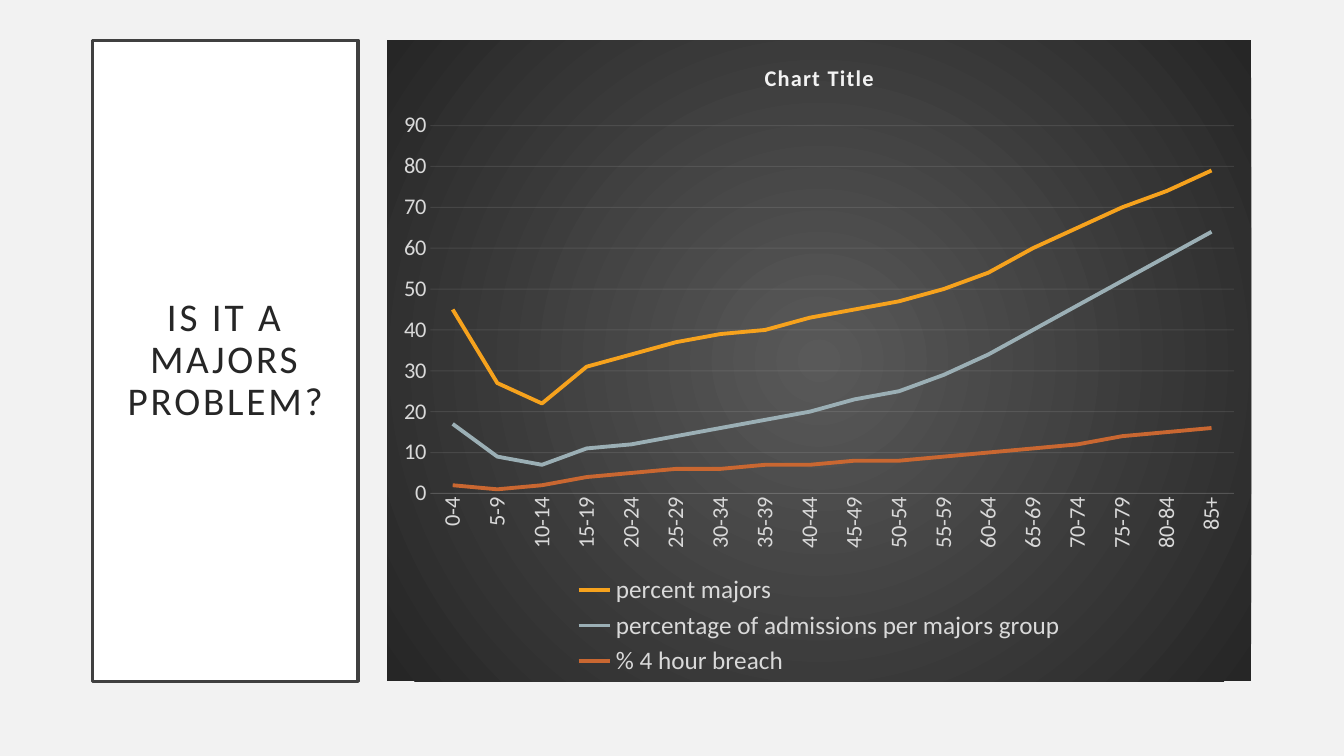
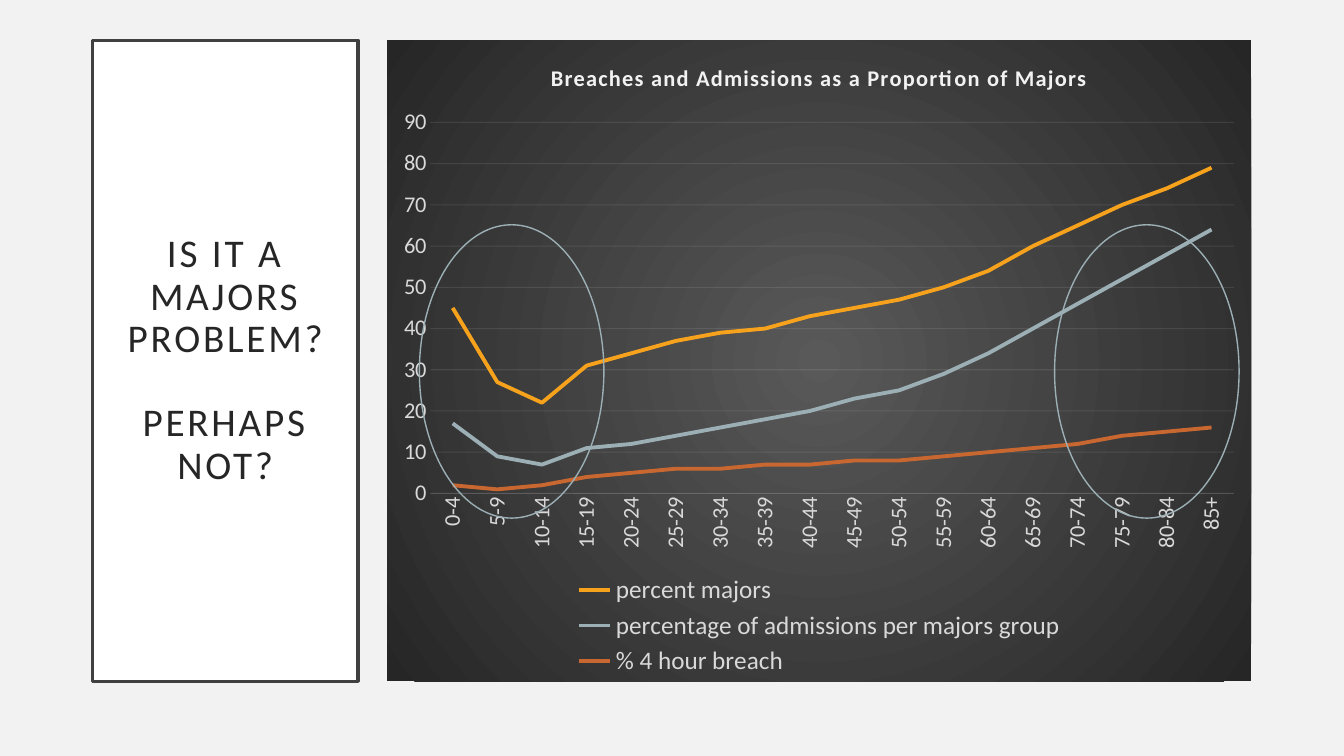
import pptx
import pptx.chart.data
import pptx.dml.color
import pptx.enum.chart
import pptx.enum.dml
import pptx.enum.shapes
import pptx.enum.text
import pptx.oxml
import pptx.oxml.ns
import pptx.util
from pptx.util import Inches

FONT = "Calibri"
COLORS = {
    "page": "F2F2F2",
    "panel": "FFFFFF",
    "border": "404040",
    "title": "262626",
    "label": "D9D9D9",
    "glow": "595959",
    "edge": "262626",
    "majors": "F6A21D",
    "admissions": "9BAFB5",
    "breach": "C96731",
}
TITLE_BOX = (0.92, 0.4, 2.63, 6.36)
CHART_BOX = (3.84, 0.4, 8.57, 6.36)
RING_BOXES = [(left, 2.23, 1.83, 2.91) for left in (4.16, 10.46)]
AGES = [f"{age}-{age + 4}" for age in range(0, 85, 5)] + ["85+"]
SERIES = [
    ("percent majors", "majors",
     [45, 27, 22, 31, 34, 37, 39, 40, 43, 45, 47, 50, 54, 60, 65, 70, 74, 79]),
    ("percentage of admissions per majors group", "admissions",
     [17, 9, 7, 11, 12, 14, 16, 18, 20, 23, 25, 29, 34, 40, 46, 52, 58, 64]),
    ("% 4 hour breach", "breach",
     [2, 1, 2, 4, 5, 6, 6, 7, 7, 8, 8, 9, 10, 11, 12, 14, 15, 16]),
]


def rgb(name):
    return pptx.dml.color.RGBColor.from_string(COLORS[name])


def place(box):
    return [Inches(length) for length in box]


def style_font(font, size, color, bold=False):
    font.name = FONT
    font.size = pptx.util.Pt(size)
    font.bold = bold
    font.color.rgb = rgb(color)


def style_line(line, color, width):
    line.color.rgb = rgb(color)
    line.width = pptx.util.Pt(width)


def set_spacing(element, query, points):
    for properties in element.xpath(query):
        properties.set("spc", str(points * 100))


def add_title_panel(page, box, lines):
    panel = page.shapes.add_shape(
        pptx.enum.shapes.MSO_SHAPE.RECTANGLE, *place(box))
    panel.shadow.inherit = False
    panel.fill.solid()
    panel.fill.fore_color.rgb = rgb("panel")
    style_line(panel.line, "border", 2.5)
    frame = panel.text_frame
    frame.word_wrap = True
    frame.vertical_anchor = pptx.enum.text.MSO_ANCHOR.MIDDLE
    frame.margin_left = frame.margin_right = Inches(0.2)
    frame.margin_top = frame.margin_bottom = Inches(0.2)
    for index, line in enumerate(lines):
        para = frame.add_paragraph() if index else frame.paragraphs[0]
        para.text = line
        para.alignment = pptx.enum.text.PP_ALIGN.CENTER
        para.line_spacing = 0.9
        para.space_before = pptx.util.Pt(30 if index else 0)
        style_font(para.font, 28, "title")
    set_spacing(panel.element, ".//a:defRPr", 2)


def add_backdrop(chart):
    backdrop = pptx.oxml.parse_xml(
        f'<c:spPr {pptx.oxml.ns.nsdecls("c", "a")}><a:gradFill><a:gsLst>'
        f'<a:gs pos="0"><a:srgbClr val="{COLORS["glow"]}"/></a:gs>'
        f'<a:gs pos="100000"><a:srgbClr val="{COLORS["edge"]}"/></a:gs>'
        '</a:gsLst><a:path path="circle">'
        '<a:fillToRect l="50000" t="50000" r="50000" b="50000"/></a:path>'
        '</a:gradFill><a:ln><a:noFill/></a:ln></c:spPr>')
    chart.element.xpath("c:chart")[0].addnext(backdrop)


def set_plot_area(chart, left, top, width, height):
    for old in chart.element.xpath(".//c:plotArea/c:layout"):
        old.getparent().remove(old)
    sizes = "".join(
        f'<c:{key} val="{value}"/>'
        for key, value in zip("xywh", (left, top, width, height)))
    layout = pptx.oxml.parse_xml(
        f'<c:layout {pptx.oxml.ns.nsdecls("c")}><c:manualLayout>'
        '<c:layoutTarget val="inner"/><c:xMode val="edge"/>'
        f'<c:yMode val="edge"/>{sizes}</c:manualLayout></c:layout>')
    chart.element.xpath(".//c:plotArea")[0].insert(0, layout)


def style_axes(chart):
    ages, values = chart.category_axis, chart.value_axis
    for axis in (ages, values):
        axis.major_tick_mark = pptx.enum.chart.XL_TICK_MARK.NONE
        axis.minor_tick_mark = pptx.enum.chart.XL_TICK_MARK.NONE
        style_font(axis.tick_labels.font, 16, "label")
    values.minimum_scale, values.maximum_scale, values.major_unit = 0, 90, 10
    values.format.line.fill.background()
    values.has_major_gridlines = True
    for line in (ages.format.line, values.major_gridlines.format.line):
        style_line(line, "page", 0.75)
    for color in chart.element.xpath(".//c:plotArea//a:ln//a:srgbClr"):
        color.append(pptx.oxml.parse_xml(
            f'<a:alpha {pptx.oxml.ns.nsdecls("a")} val="10000"/>'))
    for body in chart.element.xpath(".//c:catAx/c:txPr/a:bodyPr"):
        body.set("rot", "-5400000")
        body.set("vert", "horz")


def add_line_chart(page, box, title, plot_top):
    data = pptx.chart.data.CategoryChartData()
    data.categories = AGES
    for name, _, values in SERIES:
        data.add_series(name, values)
    chart = page.shapes.add_chart(
        pptx.enum.chart.XL_CHART_TYPE.LINE, *place(box), data).chart
    chart.font.name = FONT
    chart.font.size = pptx.util.Pt(10)
    add_backdrop(chart)
    style_axes(chart)
    set_plot_area(chart, 0.05, plot_top, 0.93, round(0.707 - plot_top, 3))
    for series, (_, color, _) in zip(chart.plots[0].series, SERIES):
        series.smooth = False
        series.marker.style = pptx.enum.chart.XL_MARKER_STYLE.NONE
        style_line(series.format.line, color, 2.75)
    chart.plots[0].vary_by_categories = False
    chart.has_legend = True
    chart.legend.position = pptx.enum.chart.XL_LEGEND_POSITION.BOTTOM
    chart.legend.include_in_layout = False
    style_font(chart.legend.font, 18, "label")
    chart.has_title = True
    chart.chart_title.include_in_layout = False
    para = chart.chart_title.text_frame.paragraphs[0]
    para.text = title
    style_font(para.font, 16, "page", bold=True)
    set_spacing(chart.element, ".//c:title//a:defRPr", 1)


def add_ring(page, box):
    ring = page.shapes.add_shape(pptx.enum.shapes.MSO_SHAPE.OVAL, *place(box))
    ring.shadow.inherit = False
    ring.fill.background()
    style_line(ring.line, "admissions", 1)


def add_chart_page(deck, lines, chart_title, plot_top, rings=()):
    page = deck.slides.add_slide(deck.slide_layouts[6])
    add_title_panel(page, TITLE_BOX, lines)
    add_line_chart(page, CHART_BOX, chart_title, plot_top)
    for box in rings:
        add_ring(page, box)


def main():
    deck = pptx.Presentation()
    deck.slide_width, deck.slide_height = Inches(13.33), Inches(7.5)
    backdrop = deck.slide_master.background.fill
    backdrop.solid()
    backdrop.fore_color.rgb = rgb("page")
    question = "IS IT A MAJORS PROBLEM?"
    add_chart_page(deck, [question], "Chart Title", 0.133)
    add_chart_page(
        deck, [question, "PERHAPS NOT?"],
        "Breaches and Admissions as a Proportion of Majors", 0.128, RING_BOXES)
    deck.save("out.pptx")


if __name__ == "__main__":
    main()
